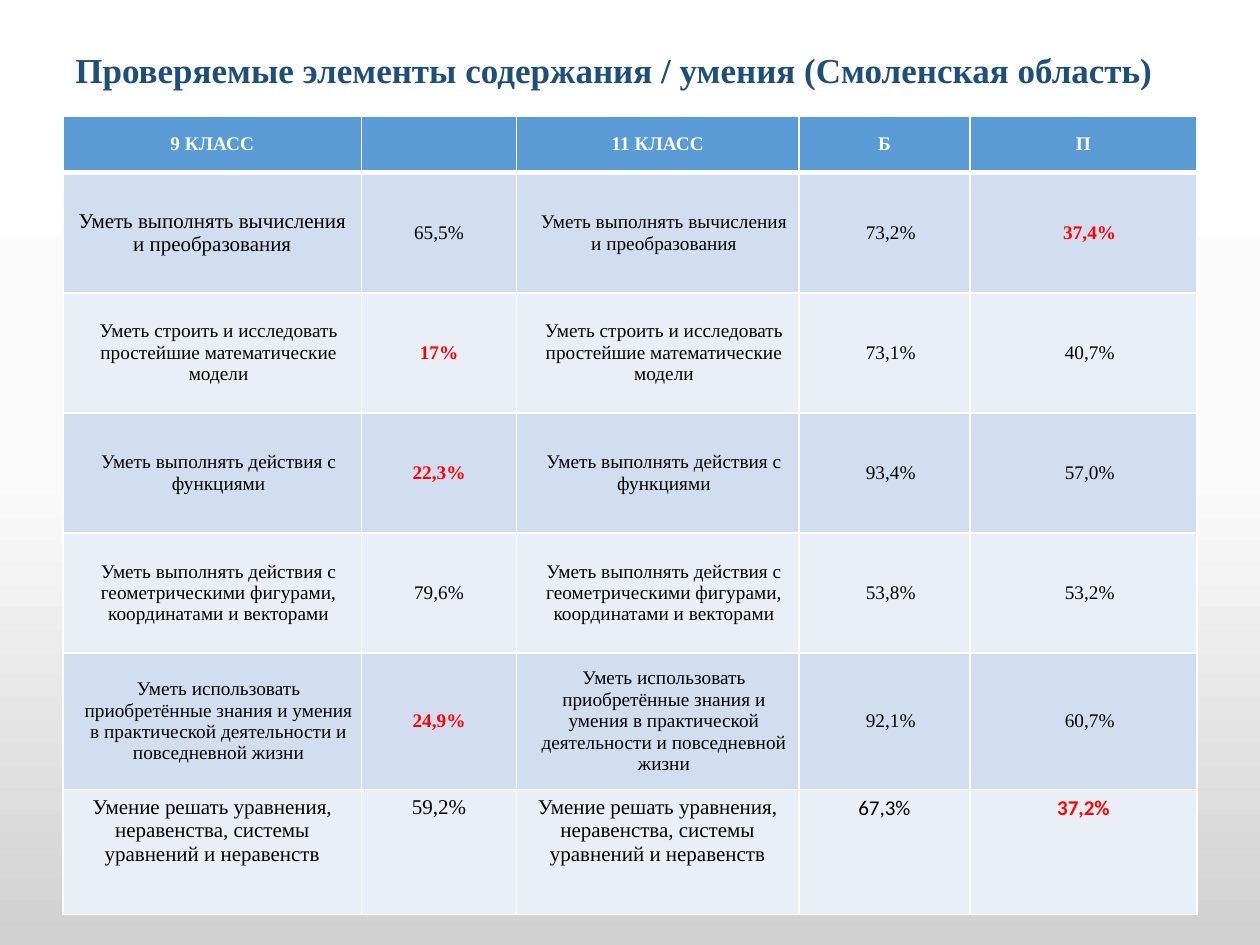
from copy import deepcopy

from lxml import etree
from pptx import Presentation, util as u
from pptx.dml import color
from pptx.enum import text
from pptx.oxml import ns

SERIF, SANS = "Times New Roman", "Calibri"
WHITE, BLACK, RED = "FFFFFF", "000000", "FF0000"
HEADER_FILL, BANDS = "5B9BD5", ("D2DEEF", "EAEFF7")
BACKGROUND = [(0, WHITE), (0.5, "FBFBFB"), (1, "D1D1D1")]
COLUMNS = [2.37, 1.23, 2.24, 1.36, 1.8]
ROWS = [0.45, 0.95, 0.95, 0.95, 0.95, 1.08, 0.99]
LOW_SCORE = 40
HEADINGS = ["9 КЛАСС", "", "11 КЛАСС", "Б", "П"]
SKILLS = [
    ("Уметь выполнять вычисления и преобразования", "65,5%", "73,2%", "37,4%"),
    ("Уметь строить и исследовать простейшие математические модели", "17%", "73,1%", "40,7%"),
    ("Уметь выполнять действия с функциями", "22,3%", "93,4%", "57,0%"),
    ("Уметь выполнять действия с геометрическими фигурами, координатами и векторами",
     "79,6%", "53,8%", "53,2%"),
    ("Уметь использовать приобретённые знания и умения в практической деятельности "
     "и повседневной жизни", "24,9%", "92,1%", "60,7%"),
    ("Умение решать уравнения, неравенства, системы уравнений и неравенств",
     "59,2%", "67,3%", "37,2%"),
]


def rgb(value):
    return color.RGBColor.from_string(value)


def write(frame, words, size=11, font=SERIF, ink=BLACK, bold=False,
          align=text.PP_ALIGN.CENTER, indent=0, spacing=1.0):
    paragraph = frame.paragraphs[0]
    paragraph.alignment = align
    paragraph.line_spacing = spacing
    if indent:
        paragraph._p.get_or_add_pPr().set("marL", str(u.Inches(indent)))
    if not words:
        paragraph.font.size = u.Pt(size)
        return
    run = paragraph.add_run()
    run.text = words
    run.font.size, run.font.name, run.font.bold = u.Pt(size), font, bold
    run.font.color.rgb = rgb(ink)


def paint_background(slide):
    fill = slide.background.fill
    fill.gradient()
    fill.gradient_angle = 270
    stop_list = slide.element.find(".//" + ns.qn("a:gsLst"))
    stop_list.append(deepcopy(stop_list[-1]))
    for stop, (position, shade) in zip(fill.gradient_stops, BACKGROUND):
        stop.position = position
        stop.color.rgb = rgb(shade)


def add_title(slide, left, top, width, height):
    title = slide.shapes.add_textbox(*map(u.Inches, (left, top, width, height)))
    frame = title.text_frame
    frame.word_wrap = True
    frame.vertical_anchor = text.MSO_ANCHOR.MIDDLE
    write(frame, "Проверяемые элементы содержания / умения (Смоленская область)",
          size=20, ink="1F4E79", bold=True, align=text.PP_ALIGN.LEFT, spacing=0.9)


def set_borders(cell, widths):
    properties = cell._tc.get_or_add_tcPr()
    for place, (side, width) in enumerate(widths.items()):
        line = etree.Element(ns.qn(f"a:ln{side}"), w=str(u.Pt(width)))
        solid = etree.SubElement(line, ns.qn("a:solidFill"))
        etree.SubElement(solid, ns.qn("a:srgbClr"), val=WHITE)
        properties.insert(place, line)


def style_cell(cell, fill, top=1, bottom=1, centred=True):
    cell.fill.solid()
    cell.fill.fore_color.rgb = rgb(fill)
    set_borders(cell, {"L": 1, "R": 1, "T": top, "B": bottom})
    if centred:
        cell.vertical_anchor = text.MSO_ANCHOR.MIDDLE
        cell.margin_left = cell.margin_right = u.Inches(0.06)
        cell.margin_top = cell.margin_bottom = u.Inches(0.03)


def is_low(words):
    return words.endswith("%") and float(words[:-1].replace(",", ".")) < LOW_SCORE


def add_results(slide, left, top, width, height):
    box = map(u.Inches, (left, top, width, height))
    results = slide.shapes.add_table(len(ROWS), len(COLUMNS), *box).table
    for column, share in zip(results.columns, COLUMNS):
        column.width = u.Inches(width * share / sum(COLUMNS))
    for row, share in zip(results.rows, ROWS):
        row.height = u.Inches(height * share / sum(ROWS))

    for column, heading in enumerate(HEADINGS):
        cell = results.cell(0, column)
        style_cell(cell, HEADER_FILL, bottom=3)
        write(cell.text_frame, heading, ink=WHITE, bold=True)

    for row, (skill, grade9, basic, profile) in enumerate(SKILLS, 1):
        last = row == len(SKILLS)
        for column, words in enumerate((skill, grade9, skill, basic, profile)):
            cell = results.cell(row, column)
            style_cell(cell, BANDS[(row - 1) % 2], top=3 if row == 1 else 1, centred=not last)
            first_skill = (row, column) == (1, 0)
            low = is_low(words)
            write(cell.text_frame, words,
                  size=12 if last or first_skill else 11,
                  font=SANS if last and column > 2 else SERIF,
                  ink=RED if low else BLACK, bold=low,
                  indent=0 if last or first_skill or column == 1 else 0.1)


def main():
    deck = Presentation()
    deck.slide_width, deck.slide_height = u.Inches(10), u.Inches(7.5)
    slide = deck.slides.add_slide(deck.slide_layouts[6])
    paint_background(slide)
    add_title(slide, 0.5, 0.3, 9, 0.54)
    add_results(slide, 0.5, 0.92, 9, 6.34)
    deck.save("out.pptx")


if __name__ == "__main__":
    main()
